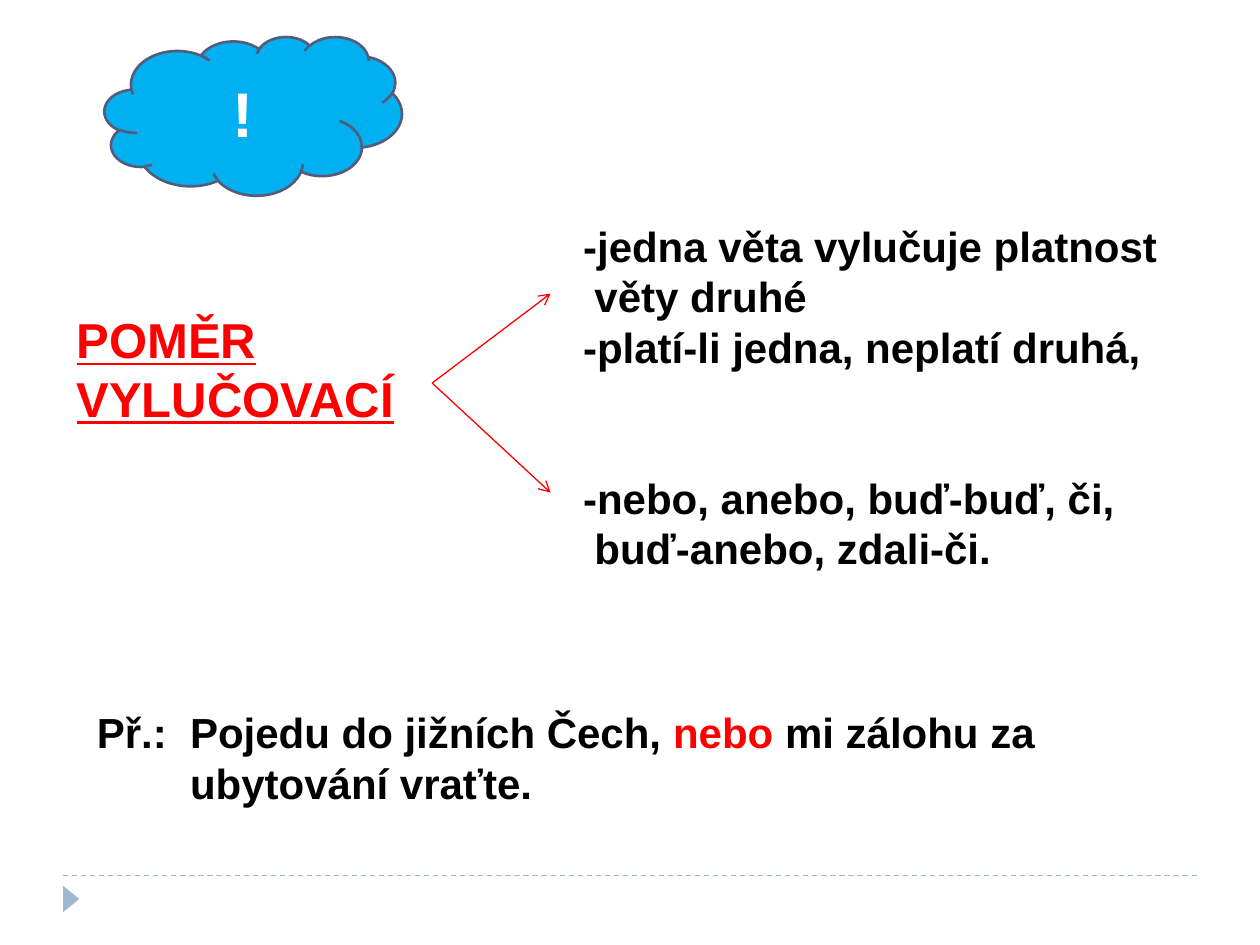
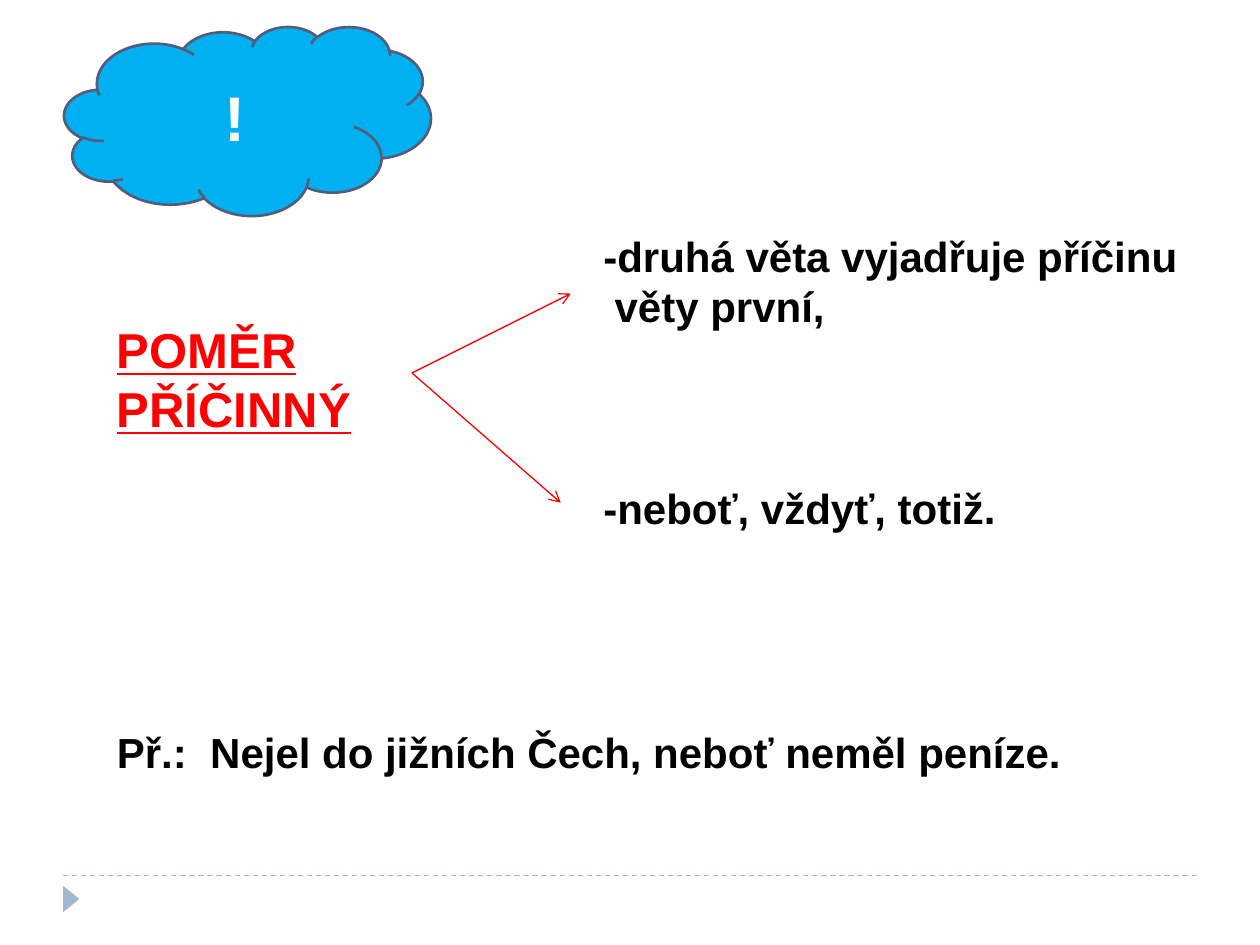
from lxml import etree
from pptx import Presentation
from pptx.dml.color import RGBColor
from pptx.enum.dml import MSO_LINE_DASH_STYLE as DASH
from pptx.enum.shapes import MSO_CONNECTOR as CONNECTOR, MSO_SHAPE as SHAPE
from pptx.enum.text import MSO_ANCHOR as ANCHOR, PP_ALIGN as ALIGN
from pptx.oxml.ns import qn
from pptx.util import Inches, Pt

COLOURS = {key: RGBColor.from_string(value) for key, value in {
    "text": "000000", "accent": "FF0000", "white": "FFFFFF",
    "footer": "9FB8CD", "cloud": "00B0F0", "outline": "545C79",
}.items()}
FONT = "Arial"
LINE_HEIGHT = 1.2
DASH_INDENT = 0.09
EXAMPLE_INDENT = 0.74

# Each point is (blank lines before it, text); asterisks enclose accented words
SLIDES = [
    {
        "cloud": (0.83, 0.29, 2.36, 1.26),
        "title": ((0.51, 2.41, 2.75, 1.04), "POMĚR\nVYLUČOVACÍ"),
        "points": ((4.53, 1.7, 4.8, 2.93), [
            (0, "-jedna věta vylučuje platnost\nvěty druhé"),
            (0, "-platí-li jedna, neplatí druhá,"),
            (2, "-nebo, anebo, buď-buď, či,\nbuď-anebo, zdali-či."),
        ]),
        "example": ((0.67, 5.56, 7.71, 0.91),
                    "Př.:\tPojedu do jižních Čech, *nebo* mi zálohu za\nubytování vraťte."),
        "arrows": ((3.43, 3.04), [(4.37, 2.33), (4.37, 3.91)]),
    },
    {
        "cloud": (0.51, 0.21, 2.91, 1.5),
        "title": ((0.83, 2.49, 2.08, 1.04), "POMĚR\nPŘÍČINNÝ"),
        "points": ((4.69, 1.78, 4.8, 2.52), [
            (0, "-druhá věta vyjadřuje příčinu\nvěty první,"),
            (3, "-neboť, vždyť, totiž."),
        ]),
        "example": ((0.83, 5.72, 7.76, 0.5),
                    "Př.:\tNejel do jižních Čech, neboť neměl peníze."),
        "arrows": ((3.27, 2.96), [(4.53, 2.33), (4.45, 3.99)]),
    },
]


def add_text(slide, box, points, size=24, colour="text", underline=None, indent=0):
    text_frame = slide.shapes.add_textbox(*map(Inches, box)).text_frame
    text_frame.word_wrap = True
    for number, (blank_lines, text) in enumerate(points):
        paragraph = text_frame.add_paragraph() if number else text_frame.paragraphs[0]
        paragraph.line_spacing = Pt(size * LINE_HEIGHT)
        paragraph.space_before = Pt(blank_lines * size * LINE_HEIGHT)
        if indent:
            properties = paragraph._p.get_or_add_pPr()
            properties.set("marL", str(Inches(indent)))
            properties.set("indent", str(-Inches(indent)))
        for line_number, line in enumerate(text.split("\n")):
            if line_number:
                paragraph.add_line_break()
            for part_number, part in enumerate(line.split("*")):
                run = paragraph.add_run()
                run.text = part
                font = run.font
                font.name, font.size, font.bold = FONT, Pt(size), True
                font.underline = underline
                font.color.rgb = COLOURS["accent" if part_number % 2 else colour]


def add_line(slide, start, end, colour):
    connector = slide.shapes.add_connector(
        CONNECTOR.STRAIGHT, *map(Inches, (*start, *end)))
    connector.line.color.rgb = COLOURS[colour]
    connector.line.width = Pt(0.75)
    etree.SubElement(connector._element.spPr, qn("a:effectLst"))
    return connector


presentation = Presentation()
presentation.slide_width = Inches(10)
presentation.slide_height = Inches(7.5)

for content in SLIDES:
    slide = presentation.slides.add_slide(presentation.slide_layouts[6])

    # Footer rule and marker
    add_line(slide, (0.5, 6.95), (9.5, 6.95), "footer").line.dash_style = DASH.DASH
    marker = slide.shapes.add_shape(
        SHAPE.ISOSCELES_TRIANGLE, *map(Inches, (0.46, 7.07, 0.21, 0.13)))
    marker.rotation = 90
    marker.shadow.inherit = False
    marker.fill.solid()
    marker.fill.fore_color.rgb = COLOURS["footer"]
    marker.line.fill.background()

    # Title, points and example
    points_box, points = content["points"]
    add_text(slide, points_box, points, indent=DASH_INDENT)
    title_box, title = content["title"]
    add_text(slide, title_box, [(0, title)], size=28, colour="accent", underline=True)
    example_box, example = content["example"]
    add_text(slide, example_box, [(0, example)], indent=EXAMPLE_INDENT)

    # Arrows from the title to the points
    start, ends = content["arrows"]
    for end in ends:
        arrow = add_line(slide, start, end, "accent")
        etree.SubElement(arrow.line._get_or_add_ln(), qn("a:tailEnd"), type="arrow")

    # Cloud with exclamation mark
    cloud = slide.shapes.add_shape(SHAPE.CLOUD, *map(Inches, content["cloud"]))
    cloud.shadow.inherit = False
    cloud.fill.solid()
    cloud.fill.fore_color.rgb = COLOURS["cloud"]
    cloud.line.color.rgb = COLOURS["outline"]
    cloud.line.width = Pt(1.5)
    cloud.text_frame.text = "!"
    cloud.text_frame.vertical_anchor = ANCHOR.MIDDLE
    paragraph = cloud.text_frame.paragraphs[0]
    paragraph.alignment = ALIGN.CENTER
    font = paragraph.runs[0].font
    font.name, font.size, font.bold = FONT, Pt(36), True
    font.color.rgb = COLOURS["white"]

presentation.save("out.pptx")
